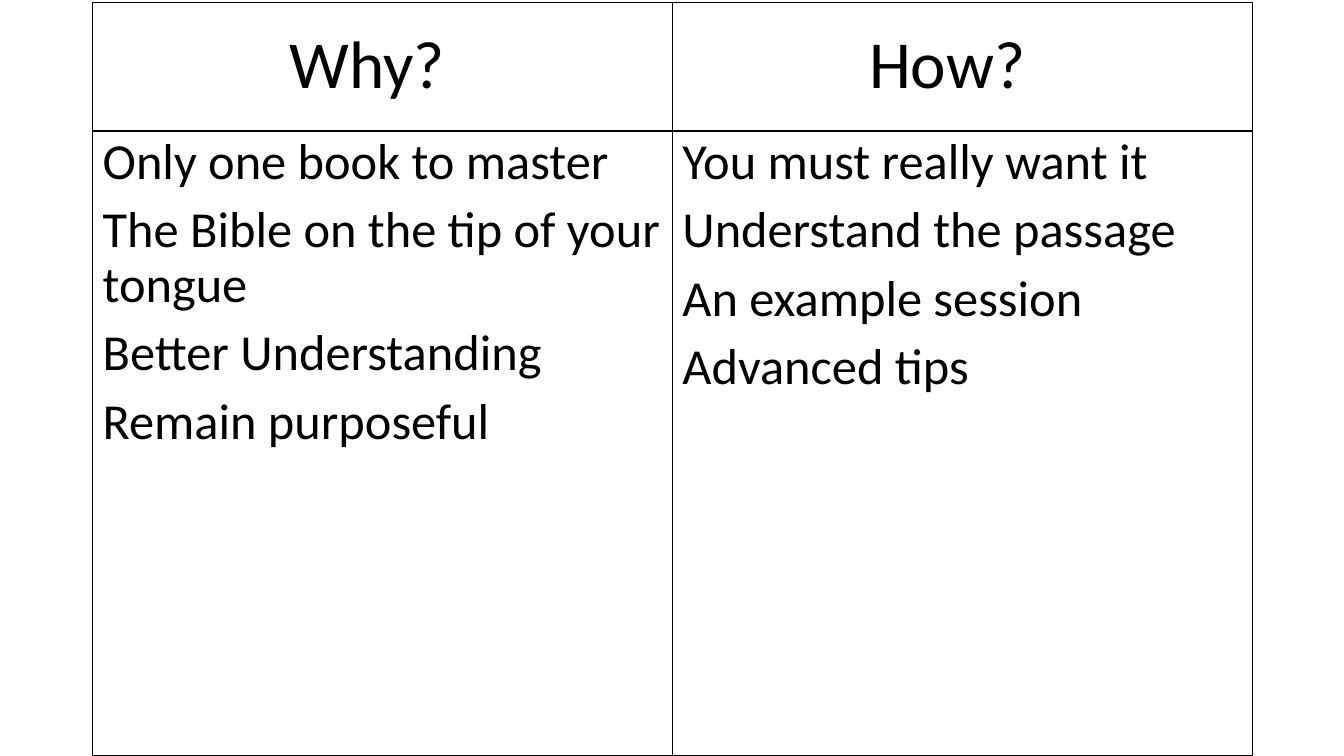
from pptx import Presentation
from pptx.dml.color import RGBColor
from pptx.enum.shapes import MSO_SHAPE as Shape
from pptx.enum.text import MSO_ANCHOR as Anchor, PP_ALIGN as Align
from pptx.util import Inches, Pt

BLACK = "000000"
LEFT, TOP = 0.92, 0.02
COLUMN_WIDTH = 5.75
HEADING_HEIGHT, BODY_HEIGHT = 1.28, 6.2

COLUMNS = [
    ("Why?", ["Only one book to master",
              "The Bible on the tip of your tongue",
              "Better Understanding",
              "Remain purposeful"]),
    ("How?", ["You must really want it",
              "Understand the passage",
              "An example session",
              "Advanced tips"]),
]


def color(hex_string):
    return RGBColor.from_string(hex_string)


def add_panel(slide, left, top, height, lines, size, align, anchor):
    shape = slide.shapes.add_shape(
        Shape.RECTANGLE, Inches(left), Inches(top),
        Inches(COLUMN_WIDTH), Inches(height))
    shape.shadow.inherit = False
    shape.fill.background()
    shape.line.color.rgb = color(BLACK)
    shape.line.width = Pt(0.75)
    frame = shape.text_frame
    frame.word_wrap = True
    frame.vertical_anchor = anchor
    for index, line in enumerate(lines):
        paragraph = frame.paragraphs[0] if index == 0 else frame.add_paragraph()
        paragraph.alignment = align
        paragraph.line_spacing = 0.9
        paragraph.space_before = Pt(10 if index else 0)
        run = paragraph.add_run()
        run.text = line
        run.font.name = "Calibri"
        run.font.size = Pt(size)
        run.font.color.rgb = color(BLACK)
    return shape


# Slide
presentation = Presentation()
presentation.slide_width = Inches(13.33)
presentation.slide_height = Inches(7.5)
slide = presentation.slides.add_slide(presentation.slide_layouts[6])

# Two columns, each a heading above a list
for number, (title, points) in enumerate(COLUMNS):
    left = LEFT + number * COLUMN_WIDTH
    heading = add_panel(slide, left, TOP, HEADING_HEIGHT, [title], 48,
                        Align.CENTER, Anchor.MIDDLE)
    # A wider right inset sets the heading slightly left of centre
    heading.text_frame.margin_right = Inches(0.4)
    add_panel(slide, left, TOP + HEADING_HEIGHT, BODY_HEIGHT, points, 36,
              Align.LEFT, Anchor.TOP)

presentation.save("out.pptx")
